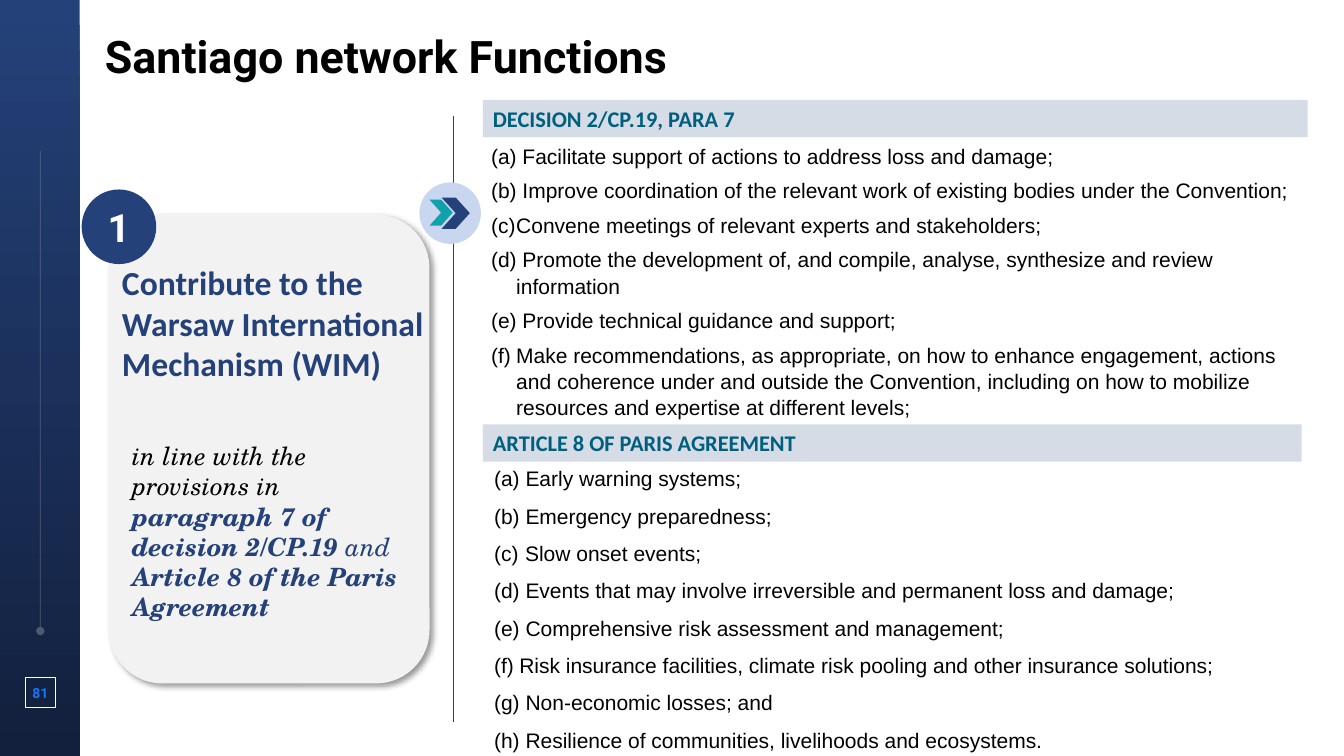
from lxml.etree import SubElement
from pptx import Presentation
from pptx.dml.color import RGBColor
from pptx.enum.shapes import MSO_CONNECTOR, MSO_SHAPE
from pptx.enum.text import MSO_ANCHOR, MSO_AUTO_SIZE, PP_ALIGN
from pptx.oxml.ns import qn
from pptx.util import Emu, Pt

PX = 9144  # EMU in one px, 100 px to the inch
NAVY, BLACK, WHITE = "244179", "000000", "FFFFFF"

DECISION_ITEMS = [
    " Facilitate support of actions to address loss and damage;",
    " Improve coordination of the relevant work of existing bodies under the Convention;",
    "Convene meetings of relevant experts and stakeholders;",
    " Promote the development of, and compile, analyse, synthesize and review information",
    " Provide technical guidance and support;",
    "Make recommendations, as appropriate, on how to enhance engagement, actions and coherence "
    "under and outside the Convention, including on how to mobilize resources and expertise "
    "at different levels;",
]
ARTICLE_ITEMS = [
    " Early warning systems;",
    " Emergency preparedness;",
    " Slow onset events;",
    " Events that may involve irreversible and permanent loss and damage;",
    " Comprehensive risk assessment and management;",
    "Risk insurance facilities, climate risk pooling and other insurance solutions;",
    " Non-economic losses; and",
    " Resilience of communities, livelihoods and ecosystems.",
]
PROVISIONS = [
    ("in line with the provisions in ", BLACK, False),
    ("paragraph 7 of decision 2/CP.19 ", NAVY, True),
    ("and ", NAVY, False),
    ("Article 8 of the Paris Agreement", NAVY, True),
]


def px(*lengths):
    return [Emu(length * PX) for length in lengths]


def rgb(color):
    return RGBColor.from_string(color)


def set_font(font, name, size, color, bold=False, italic=False):
    font.name, font.size, font.bold, font.italic = name, Pt(size), bold, italic
    font.color.rgb = rgb(color)


def set_frame(frame, inset=True, anchor=MSO_ANCHOR.TOP):
    frame.word_wrap = True
    frame.auto_size = MSO_AUTO_SIZE.NONE
    frame.vertical_anchor = anchor
    side, edge = px(10, 5) if inset else (0, 0)
    frame.margin_left = frame.margin_right = side
    frame.margin_top = frame.margin_bottom = edge


def write_line(shape, text, name, size, color, align=PP_ALIGN.LEFT, inset=False,
               anchor=MSO_ANCHOR.MIDDLE):
    """Fill a shape with one bold paragraph."""
    set_frame(shape.text_frame, inset, anchor)
    paragraph = shape.text_frame.paragraphs[0]
    paragraph.text = text
    paragraph.alignment = align
    set_font(paragraph.font, name, size, color, bold=True)


def add_box(slide, kind, box, fill=None):
    shape = slide.shapes.add_shape(kind, *px(*box))
    shape.shadow.inherit = False
    shape.line.fill.background()
    if fill:
        shape.fill.solid()
        shape.fill.fore_color.rgb = rgb(fill)
    else:
        shape.fill.background()
    return shape


def add_line(slide, ends, color):
    line = slide.shapes.add_connector(MSO_CONNECTOR.STRAIGHT, *px(*ends))
    line.line.color.rgb = rgb(color)
    line.line.width = Pt(0.5)
    SubElement(line._element.spPr, qn("a:effectLst"))
    return line


def add_soft_shadow(shape):
    effects = shape._element.spPr.find(qn("a:effectLst"))
    shadow = SubElement(effects, qn("a:outerShdw"), blurRad=str(Pt(4)), dist=str(Pt(3)),
                        dir="2700000", algn="tl", rotWithShape="0")
    color = SubElement(shadow, qn("a:srgbClr"), val=BLACK)
    SubElement(color, qn("a:alpha"), val="40000")


def place(placeholder, box):
    placeholder.left, placeholder.top, placeholder.width, placeholder.height = px(*box)


def fill_lettered_list(placeholder, box, items, gap):
    place(placeholder, box)
    frame = placeholder.text_frame
    set_frame(frame)
    for index, item in enumerate(items):
        paragraph = frame.paragraphs[0] if index == 0 else frame.add_paragraph()
        paragraph.text = item
        paragraph.alignment = PP_ALIGN.LEFT
        paragraph.line_spacing = 1.04
        paragraph.space_before = Pt(gap if index else 0)
        paragraph.space_after = Pt(gap)
        properties = paragraph._p.get_or_add_pPr()
        properties.set("marL", str(25 * PX))
        properties.set("indent", str(-25 * PX))
        SubElement(properties, qn("a:buAutoNum"), type="alphaLcParenBoth")
        set_font(paragraph.font, "Arial", 15, BLACK)


def add_side_band(slide):
    band = add_box(slide, MSO_SHAPE.RECTANGLE, (0, 0, 79, 750))
    band.fill.gradient()
    band.fill.gradient_angle = 270
    for stop, color, position in zip(band.fill.gradient_stops, (NAVY, "12203D"), (0, 1)):
        stop.color.rgb = rgb(color)
        stop.position = position

    rail = add_line(slide, (40, 626, 40, 150), WHITE)
    outline = rail.line._get_or_add_ln()
    SubElement(outline.find(".//" + qn("a:srgbClr")), qn("a:alpha"), val="24000")
    SubElement(outline, qn("a:headEnd"), type="oval")

    page = add_box(slide, MSO_SHAPE.RECTANGLE, (25, 672, 30, 30))
    page.line.color.rgb = rgb(WHITE)
    page.line.width = Pt(0.5)
    write_line(page, "81", "Roboto", 10, "1775F9", PP_ALIGN.CENTER)


def add_function_card(slide):
    card = add_box(slide, MSO_SHAPE.ROUNDED_RECTANGLE, (108, 213, 318, 465), "F2F2F2")
    add_soft_shadow(card)

    provisions = slide.shapes.add_textbox(*px(121, 432, 300, 192))
    set_frame(provisions.text_frame)
    paragraph = provisions.text_frame.paragraphs[0]
    for text, color, bold in PROVISIONS:
        run = paragraph.add_run()
        run.text = text
        set_font(run.font, "TeX Gyre Schola", 18, color, bold, italic=True)

    heading = slide.shapes.add_textbox(*px(121, 260, 305, 162))
    write_line(heading, "Contribute to the \nWarsaw International Mechanism (WIM)",
               "Calibri", 24, NAVY, anchor=MSO_ANCHOR.TOP)

    badge = add_box(slide, MSO_SHAPE.OVAL, (81, 188, 74, 74), NAVY)
    write_line(badge, "1", "Roboto", 28, WHITE, PP_ALIGN.CENTER)


def add_divider(slide):
    add_line(slide, (450, 115, 450, 716), NAVY)
    add_box(slide, MSO_SHAPE.OVAL, (416, 181, 61, 61), "C9D6EF")
    add_box(slide, MSO_SHAPE.CHEVRON, (438, 196, 28, 31), NAVY)
    add_box(slide, MSO_SHAPE.CHEVRON, (426, 198, 23, 26), "10A1AA")


def add_section_bar(slide, top, width, text):
    bar = add_box(slide, MSO_SHAPE.RECTANGLE, (479, top, width, 37), "D6DCE5")
    write_line(bar, text, "Calibri", 16, "005F7F", inset=True)


def main():
    presentation = Presentation()
    presentation.slide_width, presentation.slide_height = px(1333, 750)
    slide = presentation.slides.add_slide(presentation.slide_layouts[3])
    title, decision_list, article_list = slide.placeholders

    add_side_band(slide)
    place(title, (104, 28, 1186, 54))
    write_line(title, "Santiago network Functions", "Roboto", 32, BLACK)
    add_function_card(slide)
    add_divider(slide)

    add_section_bar(slide, 99, 818, "DECISION 2/CP.19, PARA 7")
    fill_lettered_list(decision_list, (477, 136, 820, 313), DECISION_ITEMS, gap=3)
    add_section_bar(slide, 421, 812, "ARTICLE 8 OF PARIS AGREEMENT")
    fill_lettered_list(article_list, (480, 456, 823, 291), ARTICLE_ITEMS, gap=4)

    presentation.save("out.pptx")


if __name__ == "__main__":
    main()
